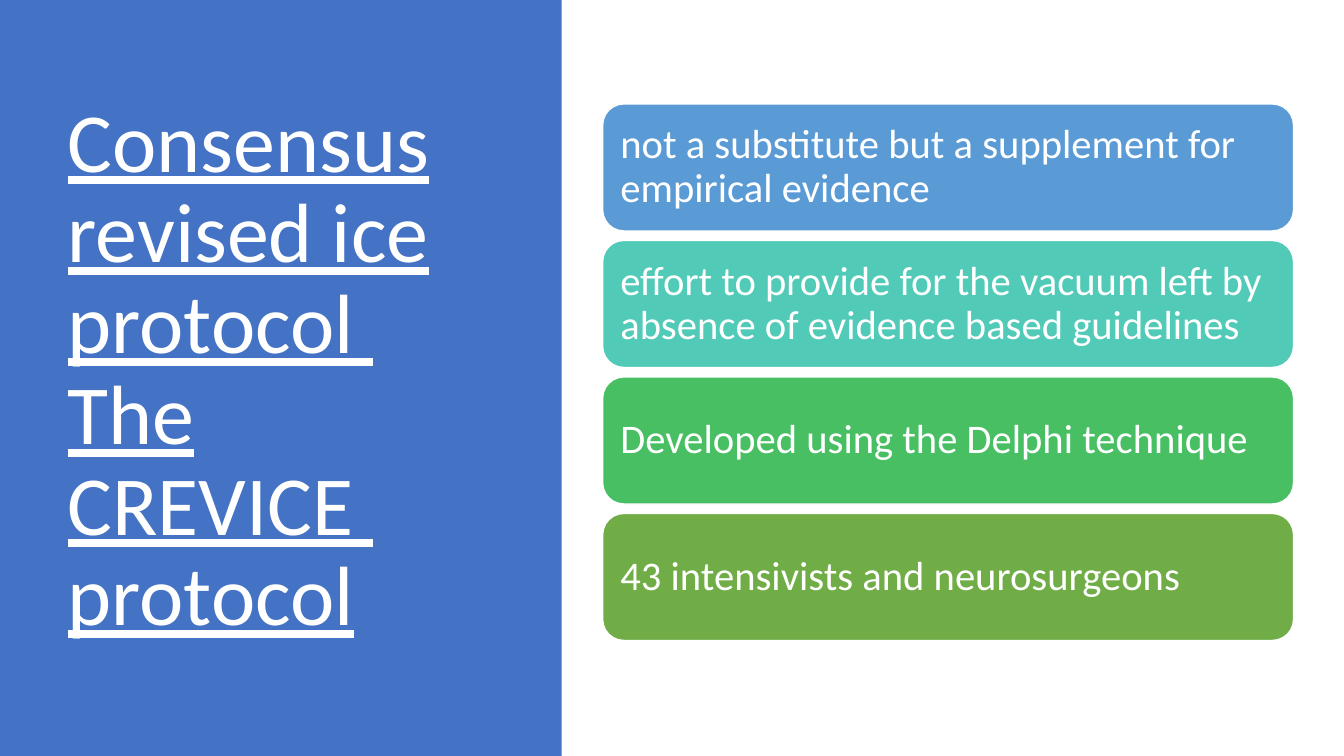
from dataclasses import dataclass

from pptx import Presentation
from pptx.dml.color import RGBColor
from pptx.enum import shapes, text
from pptx import util as u

PX = 9525
WHITE = "FFFFFF"
FONT = "Calibri"


@dataclass(frozen=True)
class Card:
    wording: str
    fill: str


CARDS = [
    Card("not a substitute but a supplement for empirical evidence", "5B9BD5"),
    Card("effort to provide for the vacuum left by absence of evidence based guidelines", "52CAB8"),
    Card("Developed using the Delphi technique", "49BF64"),
    Card("43 intensivists and neurosurgeons", "70AD47"),
]
CARD_LEFT, CARD_TOP, CARD_WIDTH, CARD_HEIGHT = 574, 99, 658, 121
CARD_PITCH = 130
CARD_INSET = 11


def px(length: int) -> u.Emu:
    return u.Emu(length * PX)


def color(value: str) -> RGBColor:
    return RGBColor.from_string(value)


def write(shape, wording: str, size: int, underline: bool = False) -> None:
    frame = shape.text_frame
    frame.word_wrap = True
    frame.vertical_anchor = text.MSO_ANCHOR.MIDDLE
    frame.text = wording
    for paragraph in frame.paragraphs:
        paragraph.alignment = text.PP_ALIGN.LEFT
        paragraph.line_spacing = 0.9
        for run in paragraph.runs:
            run.font.name = FONT
            run.font.size = u.Pt(size)
            run.font.underline = underline
            run.font.color.rgb = color(WHITE)


def add_panel(slide) -> None:
    panel = slide.shapes.add_shape(shapes.MSO_SHAPE.RECTANGLE, 0, 0, px(535), px(720))
    panel.shadow.inherit = False
    panel.fill.solid()
    panel.fill.fore_color.rgb = color("4472C4")
    panel.line.fill.background()


def add_title(slide) -> None:
    title = slide.shapes.add_textbox(px(55), px(65), px(399), px(578))
    write(title, "Consensus revised ice protocol \vThe CREVICE  protocol", 60, underline=True)


def add_card(slide, card: Card, top: int) -> None:
    shape = slide.shapes.add_shape(
        shapes.MSO_SHAPE.ROUNDED_RECTANGLE,
        px(CARD_LEFT), px(top), px(CARD_WIDTH), px(CARD_HEIGHT),
    )
    shape.shadow.inherit = False
    shape.fill.solid()
    shape.fill.fore_color.rgb = color(card.fill)
    shape.line.color.rgb = color(WHITE)
    shape.line.width = u.Pt(1)
    frame = shape.text_frame
    frame.margin_left = frame.margin_right = px(CARD_INSET)
    frame.margin_top = frame.margin_bottom = px(CARD_INSET)
    write(shape, card.wording, 29)


def main() -> None:
    presentation = Presentation()
    presentation.slide_width = px(1280)
    presentation.slide_height = px(720)
    slide = presentation.slides.add_slide(presentation.slide_layouts[6])
    add_panel(slide)
    add_title(slide)
    for index, card in enumerate(CARDS):
        add_card(slide, card, CARD_TOP + index * CARD_PITCH)
    presentation.save("out.pptx")


if __name__ == "__main__":
    main()
